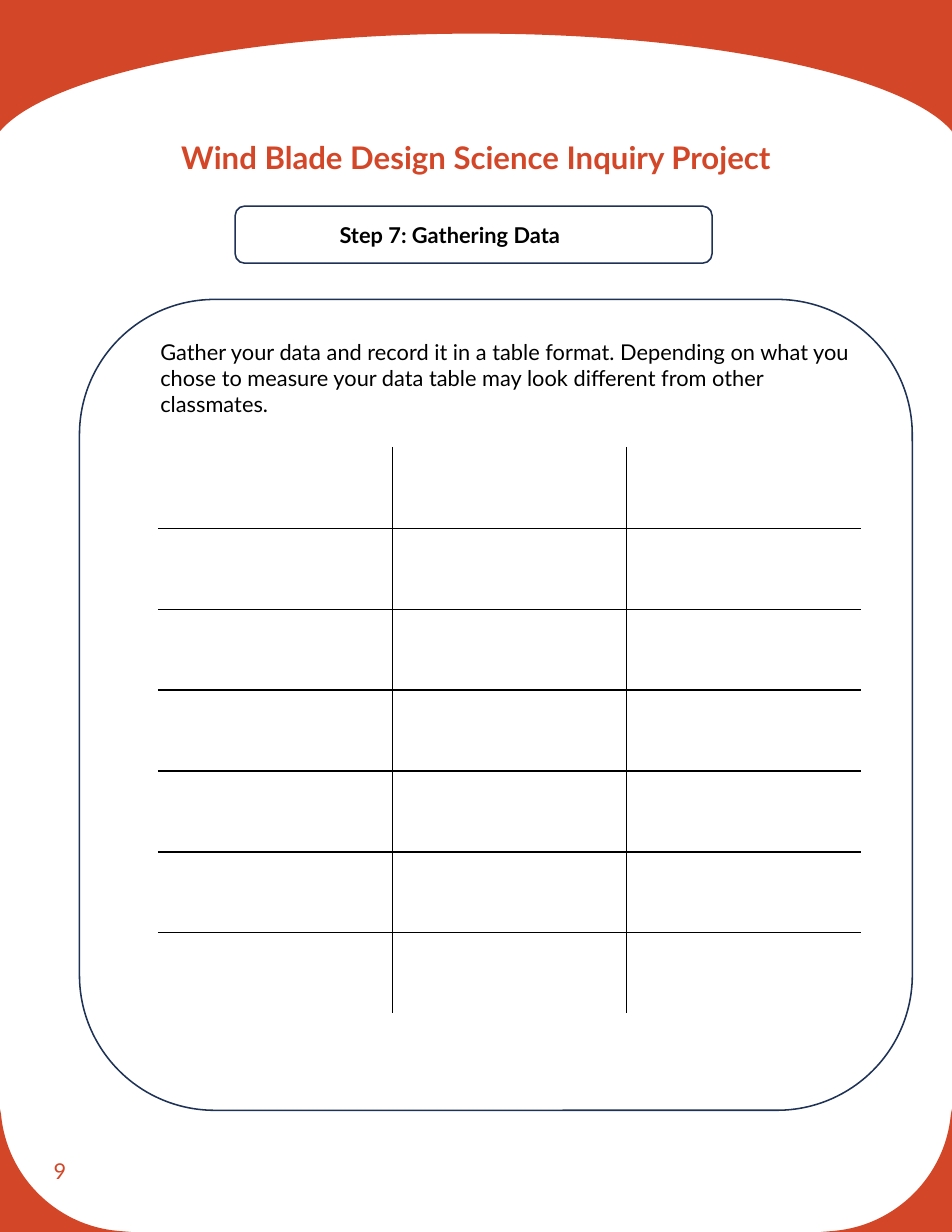
"""Build the data gathering worksheet page."""
from pptx import Presentation
from pptx.dml.color import RGBColor
from pptx.enum.shapes import MSO_SHAPE as Shape
from pptx.enum.text import MSO_ANCHOR as Anchor, PP_ALIGN as Align
from pptx.oxml.ns import qn
from pptx.util import Pt
from lxml.etree import SubElement

ORANGE = RGBColor(0xD3, 0x47, 0x28)
NAVY = RGBColor(0x1E, 0x32, 0x56)
BLACK = RGBColor(0, 0, 0)
WHITE = RGBColor(255, 255, 255)
WIDTH, HEIGHT = 612, 792
ROWS, COLUMNS = 7, 3


def add_band(points, curve_starts):
    corners = [(round(x * 100), round(y * 100)) for x, y in points]
    builder = page.shapes.build_freeform(*corners[0], scale=Pt(1) / 100)
    builder.add_line_segments(corners[1:], close=True)
    band = builder.convert_to_shape()
    band.shadow.inherit = False
    band.fill.solid()
    band.fill.fore_color.rgb = ORANGE
    band.line.fill.background()
    segments = list(band._element.iter(qn("a:lnTo")))
    for start in curve_starts:
        controls = segments[start:start + 3]
        bezier = controls[0].makeelement(qn("a:cubicBezTo"))
        controls[0].addprevious(bezier)
        for segment in controls:
            bezier.append(segment[0])
            segment.getparent().remove(segment)


def add_text(shapes, bounds, text, font, anchor=Anchor.TOP):
    box = shapes.add_textbox(*map(Pt, bounds))
    frame = box.text_frame
    frame.word_wrap = True
    frame.vertical_anchor = anchor
    para = frame.paragraphs[0]
    span = para.add_run()
    span.text = text
    span.font.name = "Lato"
    span.font.color.rgb = font["color"]
    for name in ("size", "bold"):
        setattr(span.font, name, font[name])
    return para


deck = Presentation()
deck.slide_width, deck.slide_height = Pt(WIDTH), Pt(HEIGHT)
page = deck.slides.add_slide(deck.slide_layouts[6])

add_band([(0, 0), (WIDTH, 0), (WIDTH, 85), (WIDTH, 84.4),
          (582.5, 49), (456.5, 21.6), (306, 21.6),
          (155.5, 21.6), (29.5, 49), (0, 84.4), (0, 85)], (3, 6))
corner = [(0, 712.8), (0.7, 716.4), (4.3, 756), (36, 787.7), (75.6, 791.3),
          (84.2, HEIGHT), (0, HEIGHT)]
add_band(corner, (1,))
add_band([(WIDTH - x, y) for x, y in corner], (1,))

body = {"size": Pt(14), "bold": False, "color": BLACK}
add_text(page.shapes, (27.4, 731.5, 137.5, 42.5), "9",
         {**body, "color": ORANGE}, Anchor.MIDDLE)
title = add_text(page.shapes, (25.6, 78.5, 560.9, 61.9),
                 "Wind Blade Design Science Inquiry Project",
                 {"size": Pt(20), "bold": True, "color": ORANGE})
title.alignment = Align.CENTER
title.line_spacing = 1.3

sections = [
    ((151.2, 132.5, 306.6, 36.7), (211.2, 139, 297.4, 24.5),
     "Step 7: Gathering Data", True),
    ((51.1, 192.5, 535.4, 521.3), (96, 214.1, 465.1, 58.3),
     "Gather your data and record it in a table format. Depending on what you "
     "chose to measure your data table may look different from other classmates.", False),
]
for panel_bounds, text_bounds, text, bold in sections:
    group = page.shapes.add_group_shape()
    panel = group.shapes.add_shape(Shape.ROUNDED_RECTANGLE, *map(Pt, panel_bounds))
    panel.shadow.inherit = False
    panel.fill.background()
    panel.line.color.rgb = NAVY
    panel.line.width = Pt(1)
    add_text(group.shapes, text_bounds, text, {**body, "bold": bold})

table = page.shapes.add_table(ROWS, COLUMNS, Pt(101.9), Pt(287.7),
                              Pt(451.5), Pt(364)).table
table.first_row = table.horz_banding = False
for column in table.columns:
    column.width = Pt(150.5)
for row in table.rows:
    row.height = Pt(52)
for r in range(ROWS):
    for c in range(COLUMNS):
        cell = table.cell(r, c)
        properties = cell._tc.get_or_add_tcPr()
        outer_edges = {"a:lnL": c == 0, "a:lnR": c == COLUMNS - 1,
                       "a:lnT": r == 0, "a:lnB": r == ROWS - 1}
        for tag, outer in outer_edges.items():
            border = SubElement(properties, qn(tag), w=str(Pt(1)))
            fill = SubElement(border, qn("a:solidFill"))
            SubElement(fill, qn("a:srgbClr"), val=str(WHITE if outer else BLACK))
        cell.fill.background()

deck.save("out.pptx")
